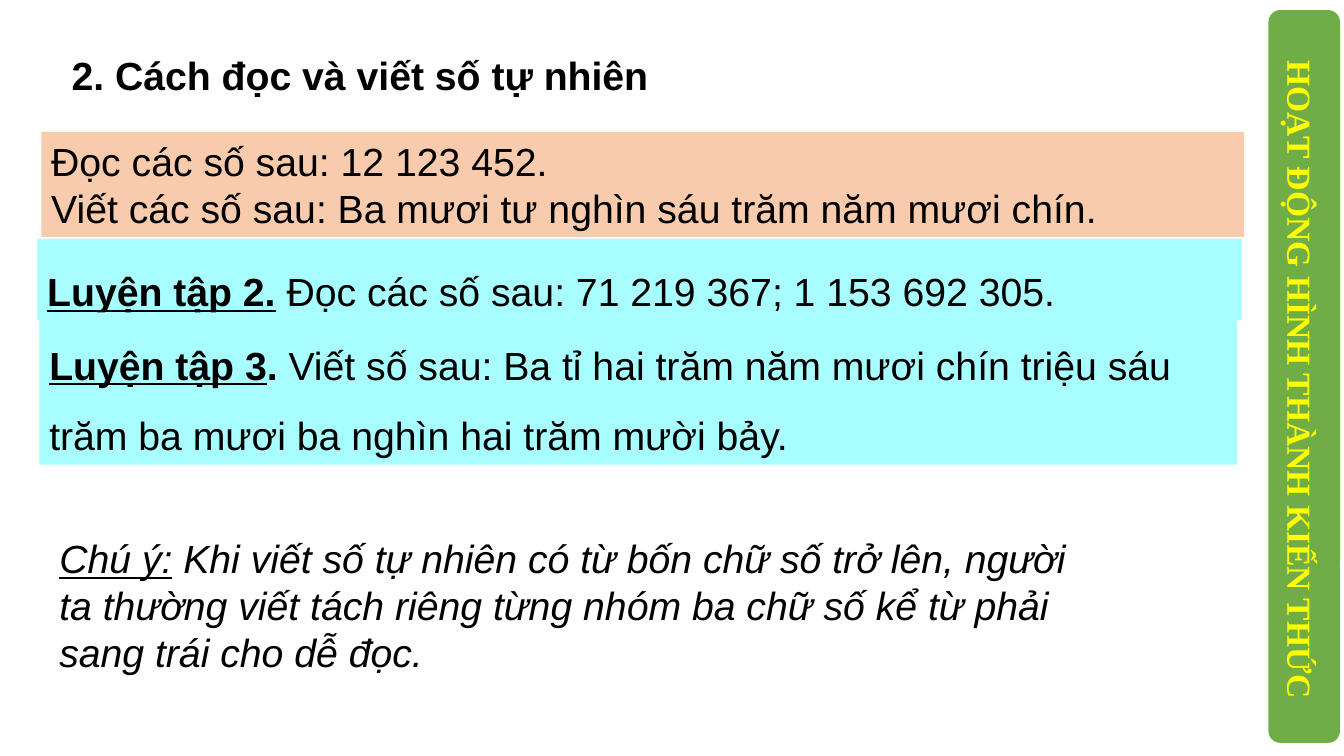
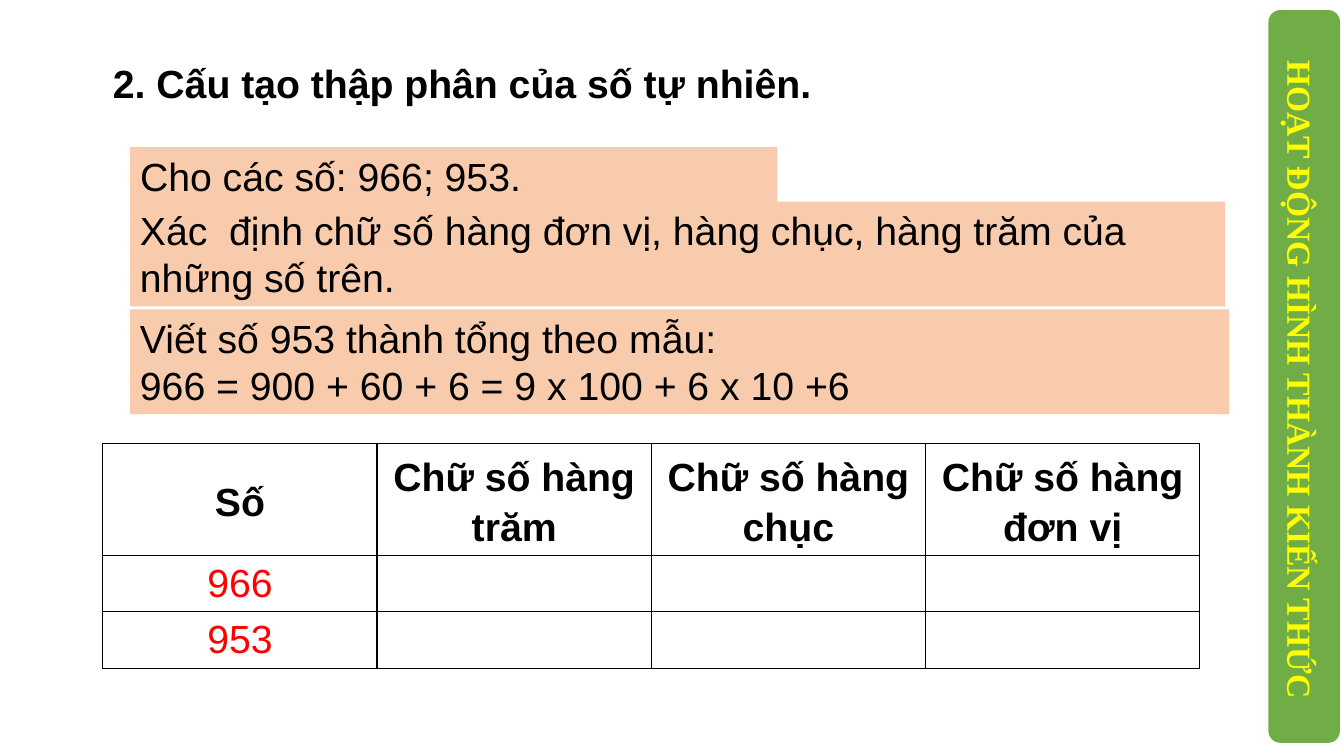
from lxml import etree
from pptx import Presentation
from pptx.dml.color import RGBColor
from pptx.enum.shapes import MSO_SHAPE
from pptx.enum.text import MSO_ANCHOR, MSO_AUTO_SIZE, PP_ALIGN
from pptx.oxml.ns import qn
from pptx.util import Inches, Pt

BLACK, RED, YELLOW = "000000", "FF0000", "FFFF00"
GREEN, PEACH, CYAN = "70AD47", "F8CBAD", "A7FDFF"
BANNER = "HOẠT ĐỘNG HÌNH THÀNH KIẾN THỨC"

# Box: place, fill, line spacing, paragraphs of (text, style letters) runs
SLIDES = [
    {
        "title": ("2. Cách đọc và viết số tự nhiên", (0.61, 0.46, 9.46, 0.57)),
        "boxes": [
            ((0.41, 1.31, 11.93, 1.04), PEACH, 1, [
                [("Đọc các số sau: 12 123 452.", "")],
                [("Viết các số sau: Ba mươi tư nghìn sáu trăm năm mươi chín.", "")]]),
            ((0.37, 2.37, 11.95, 0.81), CYAN, 1.5, [
                [("Luyện tập 2.", "bu"), (" ", "b"),
                 ("Đọc các số sau: 71 219 367; 1 153 692 305.", "")]]),
            ((0.39, 3.1, 11.88, 1.51), CYAN, 1.5, [
                [("Luyện tập 3", "bu"), (". ", "b"),
                 ("Viết số sau: Ba tỉ hai trăm năm mươi chín triệu sáu trăm "
                  "ba mươi ba nghìn hai trăm mười bảy.", "")]]),
            ((0.49, 5.25, 10.2, 1.51), None, 1, [
                [("Chú ý:", "iu"),
                 (" Khi viết số tự nhiên có từ bốn chữ số trở lên, người ta thường "
                  "viết tách riêng từng nhóm ba chữ số kể từ phải sang trái cho dễ đọc.",
                  "i")]]),
        ],
    },
    {
        "title": ("2. Cấu tạo thập phân của số tự nhiên.", (1.02, 0.54, 11.1, 0.57)),
        "boxes": [
            ((1.29, 1.46, 6.42, 0.57), PEACH, 1, [[("Cho các số: 966; 953.", "")]]),
            ((1.29, 2, 10.86, 1.04), PEACH, 1, [
                [("Xác  định chữ số hàng đơn vị, hàng chục, hàng trăm "
                  "của những số trên.", "")]]),
            ((1.29, 3.07, 10.9, 1.04), PEACH, 1, [
                [("Viết số 953 thành tổng theo mẫu:", "")],
                [("966 = 900 + 60 + 6 = 9 x 100 + 6 x 10 +6", "")]]),
        ],
        "table": {
            "at": (1.02, 4.4, 10.88, 2.23),
            "heights": (1.11, 0.56, 0.56),
            "rows": [
                ("Số", "Chữ số hàng trăm", "Chữ số hàng chục", "Chữ số hàng đơn vị"),
                ("966", "", "", ""),
                ("953", "", "", ""),
            ],
        },
    },
]


def rgb(hex_color):
    return RGBColor.from_string(hex_color)


def inches(values):
    return [Inches(v) for v in values]


def add_run(p, text, style="", color=BLACK, size=28, name="Arial"):
    """Add a run; style letters are b (bold), i (italic), u (underline)."""
    r = p.add_run()
    r.text = text
    formats = {"name": name, "size": Pt(size), "bold": "b" in style,
               "italic": "i" in style, "underline": "u" in style}
    for key, value in formats.items():
        setattr(r.font, key, value)
    r.font.color.rgb = rgb(color)


def add_title(s, text, at):
    title = s.shapes.title
    for key, value in zip(("left", "top", "width", "height"), inches(at)):
        setattr(title, key, value)
    tf = title.text_frame
    tf.vertical_anchor = MSO_ANCHOR.TOP
    tf.auto_size = MSO_AUTO_SIZE.SHAPE_TO_FIT_TEXT
    p = tf.paragraphs[0]
    p.alignment = PP_ALIGN.LEFT
    add_run(p, text, "b")


def add_box(s, at, fill, spacing, paragraphs):
    box = s.shapes.add_textbox(*inches(at))
    if fill:
        box.fill.solid()
        box.fill.fore_color.rgb = rgb(fill)
    tf = box.text_frame
    tf.word_wrap = True
    tf.auto_size = MSO_AUTO_SIZE.SHAPE_TO_FIT_TEXT
    for i, runs in enumerate(paragraphs):
        p = tf.add_paragraph() if i else tf.paragraphs[0]
        p.line_spacing = spacing
        for text, style in runs:
            add_run(p, text, style)


def add_banner(s):
    """Add the green side banner with its vertical label."""
    group = s.shapes.add_group_shape()
    bar = group.shapes.add_shape(MSO_SHAPE.ROUNDED_RECTANGLE,
                                 *inches((9.3, 3.38, 7.27, 0.71)))
    bar.shadow.inherit = False
    bar.fill.solid()
    bar.fill.fore_color.rgb = rgb(GREEN)
    bar.line.fill.background()
    label = group.shapes.add_textbox(*inches((9.33, 3.82, 7.14, 0.5)))
    label.text_frame.word_wrap = True
    add_run(label.text_frame.paragraphs[0], BANNER, "b", YELLOW, 24, "Times New Roman")
    bar.rotation = label.rotation = 90


def add_borders(cell):
    props = cell._tc.get_or_add_tcPr()
    for side in ("lnL", "lnR", "lnT", "lnB"):
        line = etree.SubElement(props, qn(f"a:{side}"), w=str(Pt(1)))
        fill = etree.SubElement(line, qn("a:solidFill"))
        etree.SubElement(fill, qn("a:srgbClr"), val=BLACK)


def add_digit_table(s, at, heights, rows):
    table = s.shapes.add_table(len(rows), len(rows[0]), *inches(at)).table
    for row, height in zip(table.rows, heights):
        row.height = Inches(height)
    for i, texts in enumerate(rows):
        for j, text in enumerate(texts):
            cell = table.cell(i, j)
            add_borders(cell)
            cell.fill.background()
            cell.margin_left = cell.margin_right = Inches(0.07)
            cell.margin_top = cell.margin_bottom = 0
            if i == 0:
                cell.vertical_anchor = MSO_ANCHOR.MIDDLE
            if text:
                p = cell.text_frame.paragraphs[0]
                p.alignment = PP_ALIGN.CENTER
                p.line_spacing = 1.15
                add_run(p, text, "" if i else "b", RED if i else BLACK)


def main():
    prs = Presentation()
    prs.slide_width, prs.slide_height = inches((13.33, 7.5))
    title_only = prs.slide_layouts.get_by_name("Title Only")
    for content in SLIDES:
        s = prs.slides.add_slide(title_only)
        add_title(s, *content["title"])
        for box in content["boxes"]:
            add_box(s, *box)
        if "table" in content:
            add_digit_table(s, **content["table"])
        add_banner(s)
    prs.save("out.pptx")


if __name__ == "__main__":
    main()
